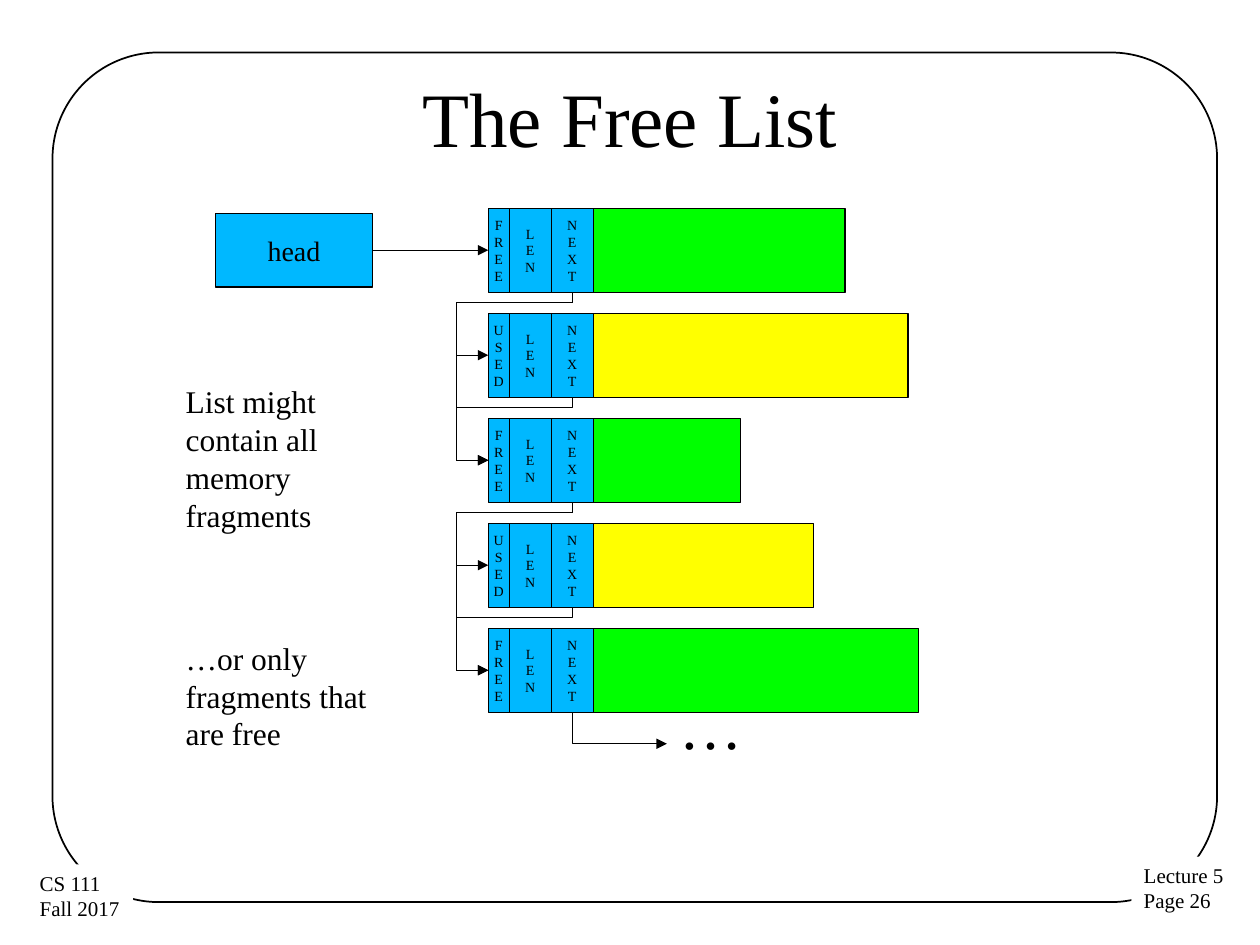
from lxml import etree
from pptx import Presentation
from pptx.dml.color import RGBColor
from pptx.enum import shapes, text
from pptx.oxml import ns
from pptx.util import Pt

BLACK = RGBColor(0x00, 0x00, 0x00)
WHITE = RGBColor(0xFF, 0xFF, 0xFF)
BLUE = RGBColor(0x00, 0xB8, 0xFF)
GREEN = RGBColor(0x00, 0xFF, 0x00)
YELLOW = RGBColor(0xFF, 0xFF, 0x00)
FONT = "Times New Roman"

ROW_LEFT, ROW_TOP, ROW_HEIGHT, ROW_PITCH = 279, 119, 48, 60
STATUS_WIDTH, FIELD_WIDTH = 12, 24
LINK_DROP, LINK_REACH = 6, 18
FRAGMENTS = [("FREE", 144), ("USED", 180), ("FREE", 84), ("USED", 126), ("FREE", 186)]
LINKS = [(0, 1), (1, 2), (2, 3), (3, 4), (0, 2), (2, 4)]


def write(shape, lines, size, align=text.PP_ALIGN.LEFT):
    """Fill a shape with one formatted paragraph per line."""
    frame = shape.text_frame
    frame.text = "\n".join(lines)
    for paragraph in frame.paragraphs:
        paragraph.alignment = align
        paragraph.font.name = FONT
        paragraph.font.size = Pt(size)
        paragraph.font.color.rgb = BLACK


def add_box(slide, left, top, width, height, fill, lines=(), size=8):
    """Add an outlined rectangle with centred lines of text."""
    shape = slide.shapes.add_shape(
        shapes.MSO_SHAPE.RECTANGLE, Pt(left), Pt(top), Pt(width), Pt(height))
    shape.shadow.inherit = False
    shape.fill.solid()
    shape.fill.fore_color.rgb = fill
    shape.line.color.rgb = BLACK
    shape.line.width = Pt(0.75)
    if lines:
        shape.text_frame.word_wrap = False
        shape.text_frame.vertical_anchor = text.MSO_ANCHOR.MIDDLE
        write(shape, lines, size, text.PP_ALIGN.CENTER)
    return shape


def add_text(slide, left, top, width, height, lines, size, wrap=True):
    """Add a left-aligned text box."""
    box = slide.shapes.add_textbox(Pt(left), Pt(top), Pt(width), Pt(height))
    box.text_frame.word_wrap = wrap
    write(box, lines, size)
    return box


def add_frame(slide):
    """Add the rounded border around the slide."""
    frame = slide.shapes.add_shape(
        shapes.MSO_SHAPE.ROUNDED_RECTANGLE, Pt(30), Pt(30), Pt(665.5), Pt(485.5))
    frame.adjustments[0] = 0.125
    frame.shadow.inherit = False
    frame.fill.background()
    frame.line.color.rgb = BLACK
    frame.line.width = Pt(1)


def add_corner_label(slide, left, top, lines):
    """Add a white label that covers a corner of the border."""
    label = add_text(slide, left, top, 60.5, 36.5, lines, 12, wrap=False)
    label.fill.solid()
    label.fill.fore_color.rgb = WHITE


def add_fragment(slide, top, status, width, fill):
    """Add a memory fragment and return its status and next fields."""
    left = ROW_LEFT
    fields = []
    for label, field_width in ((status, STATUS_WIDTH), ("LEN", FIELD_WIDTH), ("NEXT", FIELD_WIDTH)):
        fields.append(add_box(slide, left, top, field_width, ROW_HEIGHT, BLUE, label))
        left += field_width
    add_box(slide, left, top, width, ROW_HEIGHT, fill)
    return fields[0], fields[-1]


def add_arrow(slide, kind, source, site, target=None, end=(0, 0)):
    """Add an arrow from a site of a shape to a target's left side or a point."""
    arrow = slide.shapes.add_connector(kind, 0, 0, Pt(end[0]), Pt(end[1]))
    arrow.begin_connect(source, site)
    if target is not None:
        arrow.end_connect(target, 1)
    arrow.line.color.rgb = BLACK
    arrow.line.width = Pt(0.75)
    etree.SubElement(arrow.line._get_or_add_ln(), ns.qn("a:tailEnd"), type="triangle")
    etree.SubElement(arrow._element.spPr, ns.qn("a:effectLst"))
    return arrow


def bend(arrow, preset, rotation, flip=False, adjustments=()):
    """Turn an elbow arrow so that it leaves its source downwards."""
    centre_x = (arrow.begin_x + arrow.end_x) // 2
    centre_y = (arrow.begin_y + arrow.end_y) // 2
    across, down = arrow.width, arrow.height
    arrow.left, arrow.top = centre_x - down // 2, centre_y - across // 2
    arrow.width, arrow.height = down, across
    properties = arrow._element.spPr
    transform = properties.find(ns.qn("a:xfrm"))
    transform.set("rot", str(rotation * 60000))
    transform.set("flipH", str(int(flip)))
    transform.set("flipV", "0")
    geometry = properties.find(ns.qn("a:prstGeom"))
    geometry.set("prst", preset)
    guides = geometry.get_or_add_avLst()
    for number, value in enumerate(adjustments, 1):
        etree.SubElement(guides, ns.qn("a:gd"), name=f"adj{number}",
                         fmla=f"val {round(value * 100000)}")


def add_link(slide, source, target):
    """Add an arrow from a next field round to a later fragment."""
    arrow = add_arrow(slide, shapes.MSO_CONNECTOR.ELBOW, source, 2, target)
    drop = Pt(LINK_DROP) / arrow.height
    reach = 1 + Pt(LINK_REACH) / arrow.width
    bend(arrow, "bentConnector4", 90, adjustments=(drop, reach))


def add_title(slide):
    """Place and format the slide title."""
    title = slide.shapes.title
    title.left, title.top, title.width, title.height = Pt(36), Pt(21.6), Pt(648), Pt(90)
    title.text_frame.vertical_anchor = text.MSO_ANCHOR.MIDDLE
    write(title, ["The Free List"], 44, text.PP_ALIGN.CENTER)


def main():
    """Build the slide and save it."""
    presentation = Presentation()
    presentation.slide_width, presentation.slide_height = Pt(720), Pt(540)
    slide = presentation.slides.add_slide(presentation.slide_layouts[5])

    add_frame(slide)
    add_corner_label(slide, 646.5, 489.5, ["Lecture 5", "Page 26"])
    add_corner_label(slide, 15.6, 494, ["CS 111", "Fall 2017"])
    add_title(slide)

    head = add_box(slide, 123, 122, 90, 42, BLUE, ["head"], 16)
    fills = {"FREE": GREEN, "USED": YELLOW}
    fragments = [
        add_fragment(slide, ROW_TOP + row * ROW_PITCH, status, width, fills[status])
        for row, (status, width) in enumerate(FRAGMENTS)
    ]

    add_arrow(slide, shapes.MSO_CONNECTOR.STRAIGHT, head, 3, fragments[0][0])
    for source, target in LINKS:
        add_link(slide, fragments[source][1], fragments[target][0])
    onward = add_arrow(slide, shapes.MSO_CONNECTOR.ELBOW, fragments[-1][1], 2, end=(381, 425))
    bend(onward, "bentConnector2", 270, flip=True)

    add_text(slide, 381.5, 389, 78, 50, ["…"], 36)
    add_text(slide, 99, 215, 126, 124, ["List might contain all memory fragments"], 18)
    add_text(slide, 99, 361.5, 126, 124, ["…or only fragments that are free"], 18)
    presentation.save("out.pptx")


if __name__ == "__main__":
    main()
